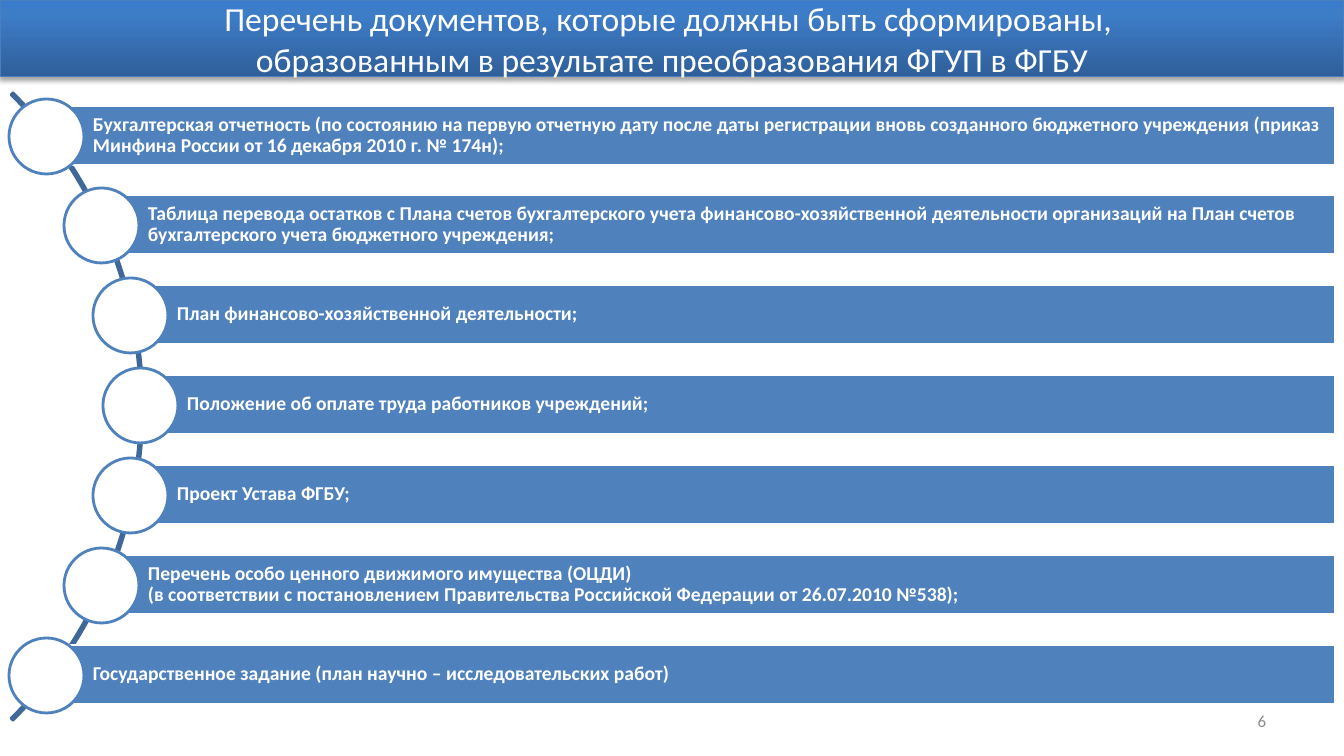
from dataclasses import dataclass

from pptx import Presentation
from pptx.dml.color import RGBColor
from pptx.enum.shapes import MSO_SHAPE as Kind
from pptx.enum.text import MSO_ANCHOR as Anchor, MSO_AUTO_SIZE as Fit, PP_ALIGN as Align
from pptx.oxml import parse_xml
from pptx.oxml.ns import nsdecls
from pptx.shapes.autoshape import Shape
from pptx.slide import Slide
from pptx.util import Emu, Pt

WIDE, HIGH = 1344, 756
SCALE = 12192000 / WIDE
FONT, WHITE, BLUE = "Calibri", "FFFFFF", "4F81BD"

# Bars: first top, distance from first to last, height, right edge
TOP, SPAN, BAR, EDGE = 106, 539, 59, 1335
DOT = 75


@dataclass(frozen=True)
class Item:
    left: int
    text: str


ITEMS = [
    Item(46, "Бухгалтерская отчетность (по состоянию на первую отчетную дату после даты "
             "регистрации вновь созданного бюджетного учреждения (приказ Минфина России "
             "от 16 декабря 2010 г. № 174н);"),
    Item(101, "Таблица перевода остатков с Плана счетов бухгалтерского учета "
              "финансово-хозяйственной деятельности организаций на План счетов "
              "бухгалтерского учета бюджетного учреждения;"),
    Item(130, "План финансово-хозяйственной деятельности;"),
    Item(140, "Положение об оплате труда работников учреждений;"),
    Item(130, "Проект Устава ФГБУ;"),
    Item(101, "Перечень особо ценного движимого имущества (ОЦДИ) \n"
              "(в соответствии с постановлением Правительства Российской Федерации "
              "от 26.07.2010 №538);"),
    Item(46, "Государственное задание (план научно – исследовательских работ)"),
]
TITLE = ("Перечень документов, которые должны быть сформированы, \n"
         "образованным в результате преобразования ФГУП в ФГБУ")


def px(n: int) -> Emu:
    return Emu(round(n * SCALE))


def rgb(code: str) -> RGBColor:
    return RGBColor.from_string(code)


def place(shape: Shape, x: int, y: int, w: int, h: int) -> None:
    shape.left, shape.top, shape.width, shape.height = px(x), px(y), px(w), px(h)


def stroke(shape: Shape, code: str, width: float) -> None:
    shape.line.color.rgb = rgb(code)
    shape.line.width = Pt(width)


def draw(slide: Slide, kind: Kind, x: int, y: int, w: int, h: int,
         line: str, fill: str | None = None) -> Shape:
    shape = slide.shapes.add_shape(kind, px(x), px(y), px(w), px(h))
    shape.shadow.inherit = False
    if fill:
        shape.fill.solid()
        shape.fill.fore_color.rgb = rgb(fill)
    else:
        shape.fill.background()
    stroke(shape, line, 2)
    return shape


def write(shape: Shape, text: str, size: int, code: str, align: Align,
          bold: bool = False, space: float = 1.0) -> None:
    frame = shape.text_frame
    frame.word_wrap = True
    frame.auto_size = Fit.NONE
    frame.vertical_anchor = Anchor.MIDDLE
    para = frame.paragraphs[0]
    para.alignment, para.line_spacing = align, space
    for num, part in enumerate(text.split("\n")):
        if num:
            para.add_line_break()
        run = para.add_run()
        run.text = part
        font = run.font
        font.name, font.size, font.bold = FONT, Pt(size), bold
        font.color.rgb = rgb(code)


def head(slide: Slide) -> None:
    title = slide.shapes.title
    place(title, 0, 0, WIDE, 77)
    # Gradient and soft shadow
    stops = "".join(
        f'<a:gs pos="{pos}000"><a:srgbClr val="{code}"/></a:gs>'
        for pos, code in [(0, "2F5F99"), (80, "3D7CC7"), (100, "3A7CCB")])
    props = title._element.spPr
    for xml in (
        f'<a:prstGeom {nsdecls("a")} prst="rect"><a:avLst/></a:prstGeom>',
        f'<a:gradFill {nsdecls("a")} rotWithShape="1"><a:gsLst>{stops}</a:gsLst>'
        '<a:lin ang="16200000" scaled="0"/></a:gradFill>',
        f'<a:effectLst {nsdecls("a")}><a:outerShdw blurRad="39370" dist="22860" '
        'dir="5400000" rotWithShape="0"><a:srgbClr val="000000">'
        '<a:alpha val="35000"/></a:srgbClr></a:outerShdw></a:effectLst>',
    ):
        props.append(parse_xml(xml))
    stroke(title, "4B7EBC", 0.75)
    write(title, TITLE, 24, WHITE, Align.CENTER)


def row(slide: Slide, item: Item, y: int) -> None:
    bar = draw(slide, Kind.RECTANGLE, item.left, y, EDGE - item.left, BAR, WHITE, BLUE)
    frame = bar.text_frame
    frame.margin_left = px(47)
    frame.margin_top = frame.margin_right = frame.margin_bottom = px(4)
    write(bar, item.text, 14, WHITE, Align.LEFT, True, 0.9)
    draw(slide, Kind.OVAL, item.left - 37, y - 7, DOT, DOT, BLUE, WHITE)


def main() -> None:
    deck = Presentation()
    deck.slide_width, deck.slide_height = px(WIDE), px(HIGH)
    slide = deck.slides.add_slide(deck.slide_layouts[5])
    head(slide)

    # Arc behind the rows
    arc = draw(slide, Kind.BLOCK_ARC, -744, -37, 887, 887, "3F6797")
    for num, value in enumerate((189, 27, 0.003)):
        arc.adjustments[num] = value

    # Rows at equal steps
    for num, item in enumerate(ITEMS):
        row(slide, item, TOP + SPAN * num // (len(ITEMS) - 1))

    # Page number
    page = slide.shapes.add_textbox(px(963), px(701), px(313), px(40))
    write(page, "6", 12, "8C8C8C", Align.RIGHT)
    deck.save("out.pptx")


if __name__ == "__main__":
    main()
